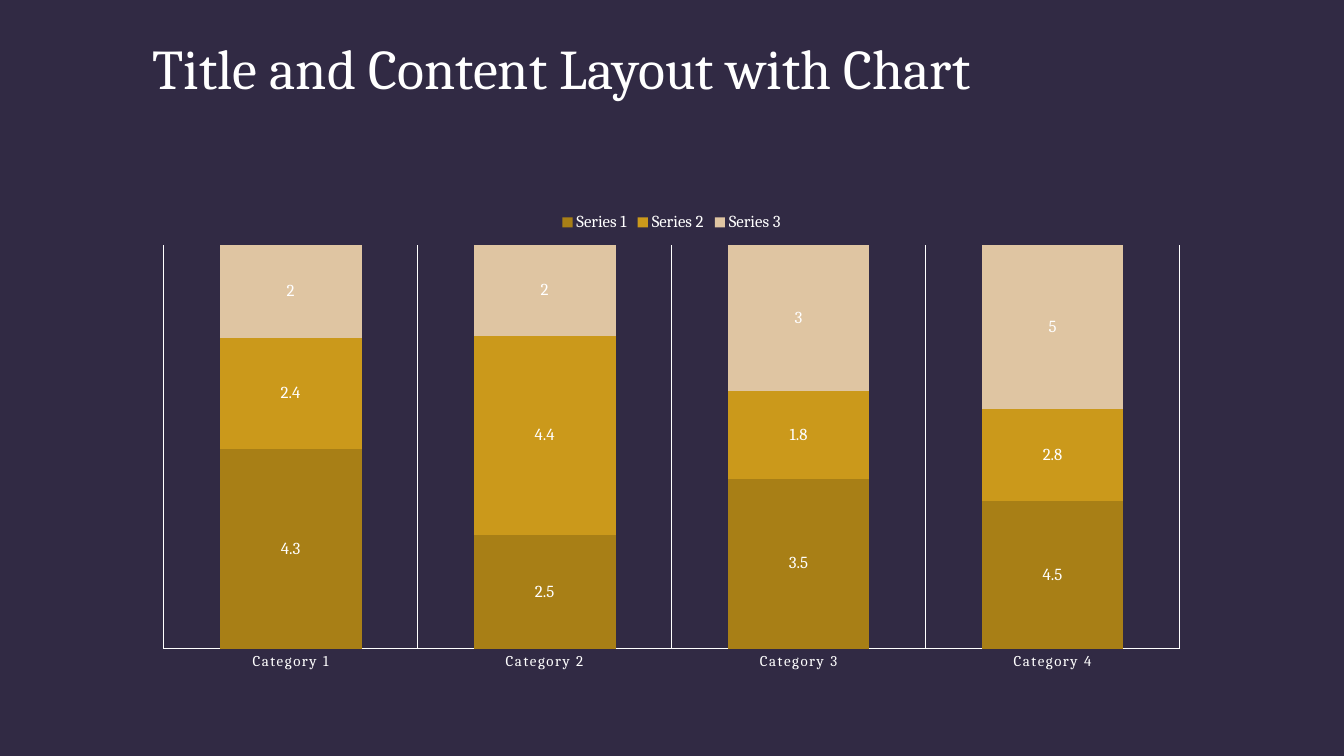
from pptx import Presentation
from pptx.chart.data import CategoryChartData
from pptx.dml.color import RGBColor
from pptx.enum.chart import (
    XL_CHART_TYPE as ChartType,
    XL_LABEL_POSITION as LabelPosition,
    XL_LEGEND_POSITION as LegendPosition,
    XL_TICK_MARK as TickMark,
)
from pptx.enum.shapes import MSO_SHAPE as Preset
from pptx.enum.text import MSO_ANCHOR as Anchor, PP_ALIGN as Align
from pptx.util import Cm, Pt

FONT = "Cambria"
WHITE = "FFFFFF"
PURPLE = "461D7C"
DARK_PURPLE = "312A44"
CONTENT_LEFT = Cm(3.59)
CONTENT_WIDTH = Cm(26.67)

CATEGORIES = [f"Category {number}" for number in range(1, 5)]
SERIES = [
    ("Series 1", (4.3, 2.5, 3.5, 4.5), "A87F16"),
    ("Series 2", (2.4, 4.4, 1.8, 2.8), "CB991B"),
    ("Series 3", (2, 2, 3, 5), "DFC5A2"),
]


def color(hex_text):
    return RGBColor.from_string(hex_text)


def style_font(font, size):
    font.name = FONT
    font.size = Pt(size)
    font.bold = False
    font.color.rgb = color(WHITE)


def style_line(line):
    line.color.rgb = color(WHITE)
    line.width = Pt(0.75)


def add_background(presentation, slide):
    """Fill the slide and lay a full-size panel behind the content."""
    fill = slide.background.fill
    fill.solid()
    fill.fore_color.rgb = color(PURPLE)
    panel = slide.shapes.add_shape(
        Preset.RECTANGLE, 0, 0, presentation.slide_width, presentation.slide_height
    )
    panel.shadow.inherit = False
    panel.fill.solid()
    panel.fill.fore_color.rgb = color(DARK_PURPLE)
    panel.line.fill.background()
    slide.shapes._spTree.insert(2, panel._element)


def set_title(slide, text):
    title = slide.shapes.title
    title.left, title.top = CONTENT_LEFT, Cm(1.04)
    title.width, title.height = CONTENT_WIDTH, Cm(3.18)
    frame = title.text_frame
    frame.word_wrap = True
    frame.vertical_anchor = Anchor.TOP
    paragraph = frame.paragraphs[0]
    paragraph.alignment = Align.LEFT
    paragraph.line_spacing = 0.8
    run = paragraph.add_run()
    run.text = text
    style_font(run.font, 40)


def style_axes(chart):
    category_axis = chart.category_axis
    category_axis.major_tick_mark = TickMark.NONE
    category_axis.minor_tick_mark = TickMark.NONE
    category_axis.has_major_gridlines = True
    style_line(category_axis.major_gridlines.format.line)
    style_line(category_axis.format.line)
    label_font = category_axis.tick_labels.font
    style_font(label_font, 10.64)
    label_font._element.set("spc", "120")

    chart.value_axis.has_major_gridlines = False
    chart.value_axis.visible = False


def style_series(series, fill_color):
    series.format.fill.solid()
    series.format.fill.fore_color.rgb = color(fill_color)
    labels = series.data_labels
    labels.show_value = True
    labels.position = LabelPosition.CENTER
    style_font(labels.font, 12)


def add_stacked_chart(slide):
    data = CategoryChartData()
    data.categories = CATEGORIES
    for name, values, _ in SERIES:
        data.add_series(name, values)
    chart = slide.shapes.add_chart(
        ChartType.COLUMN_STACKED_100,
        CONTENT_LEFT, Cm(5.08), CONTENT_WIDTH, Cm(12.06), data,
    ).chart
    style_font(chart.font, 10)
    chart.has_title = False
    chart.has_legend = True
    chart.legend.position = LegendPosition.TOP
    chart.legend.include_in_layout = False
    style_font(chart.legend.font, 12)
    style_axes(chart)

    plot = chart.plots[0]
    plot.gap_width = 79
    plot.overlap = 100
    plot.vary_by_categories = False
    for series, (_, _, fill_color) in zip(plot.series, SERIES):
        style_series(series, fill_color)


def main():
    presentation = Presentation()
    presentation.slide_width = Cm(33.87)
    presentation.slide_height = Cm(19.05)
    slide = presentation.slides.add_slide(presentation.slide_layouts[5])
    add_background(presentation, slide)
    set_title(slide, "Title and Content Layout with Chart")
    add_stacked_chart(slide)
    presentation.save("out.pptx")


if __name__ == "__main__":
    main()
